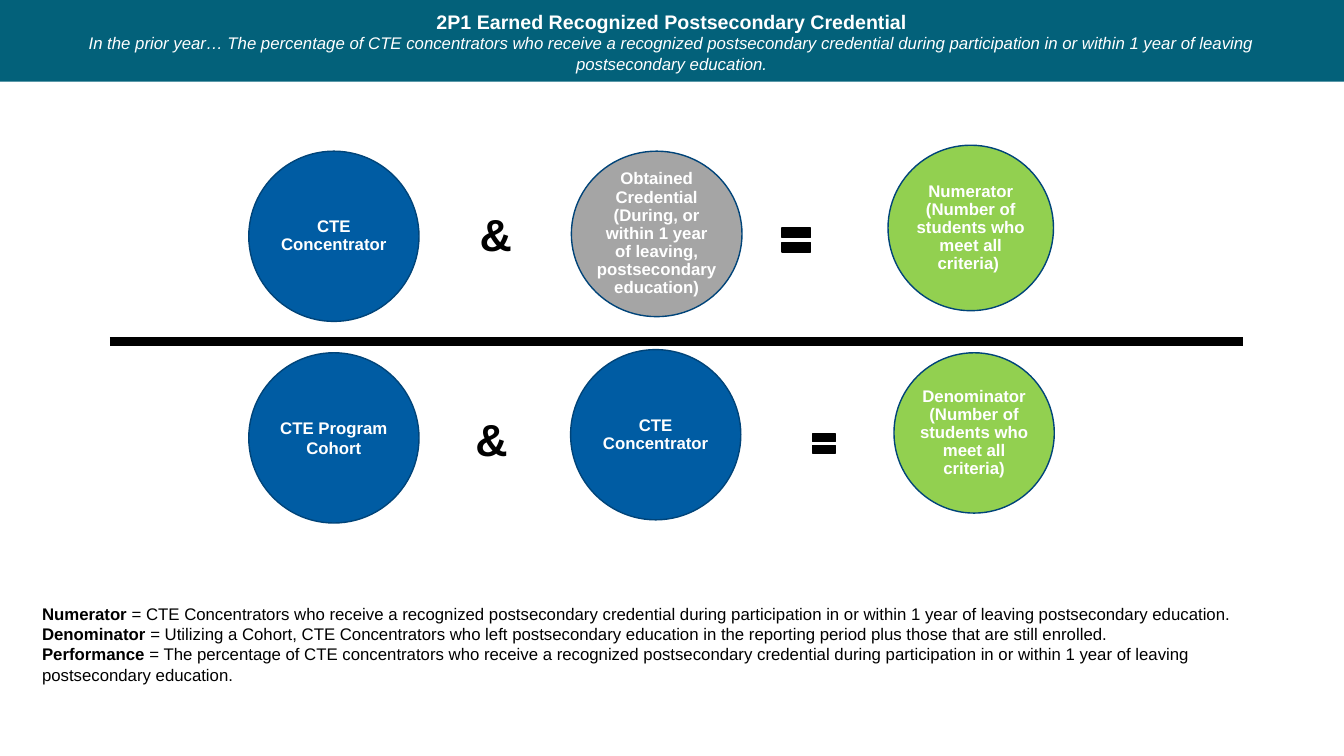
from pptx import Presentation
from pptx.dml.color import RGBColor
from pptx.enum.shapes import MSO_CONNECTOR, MSO_SHAPE
from pptx.enum.text import MSO_ANCHOR, PP_ALIGN
from pptx.oxml.ns import qn
from pptx.util import Cm, Pt
from lxml import etree

COLORS = {
    "banner": "03617A",
    "blue": "005CA3",
    "outline": "004479",
    "gray": "A5A5A5",
    "green": "92D050",
    "black": "000000",
    "white": "FFFFFF",
}


def add_filled_shape(preset, left, top, width, height, fill, outline=None):
    shape = slide.shapes.add_shape(preset, Cm(left), Cm(top), Cm(width), Cm(height))
    shape.shadow.inherit = False
    shape.fill.solid()
    shape.fill.fore_color.rgb = RGBColor.from_string(COLORS[fill])
    if outline:
        shape.line.color.rgb = RGBColor.from_string(COLORS[outline])
        shape.line.width = Pt(1)
    else:
        shape.line.fill.background()
    return shape


def format_run(run, size, color, bold=False, italic=False):
    run.font.name = "Arial"
    run.font.size = Pt(size)
    run.font.bold = bold
    run.font.italic = italic
    run.font.color.rgb = RGBColor.from_string(COLORS[color])


presentation = Presentation()
presentation.slide_width = Cm(33.87)
presentation.slide_height = Cm(19.05)
slide = presentation.slides.add_slide(presentation.slide_layouts[6])

# Banner with title and subtitle
add_filled_shape(MSO_SHAPE.RECTANGLE, 0, 0, 33.87, 2.06, "banner")
title_box = slide.shapes.add_textbox(Cm(1.37), Cm(0.36), Cm(31.12), Cm(1.37))
title_frame = title_box.text_frame
title_frame.word_wrap = True
title_frame.vertical_anchor = MSO_ANCHOR.MIDDLE
title_frame.text = (
    "2P1 Earned Recognized Postsecondary Credential\n"
    "In the prior year… The percentage of CTE concentrators who receive a recognized "
    "postsecondary credential during participation in or within 1 year of leaving "
    "postsecondary education."
)
title, subtitle = title_frame.paragraphs
title.alignment = subtitle.alignment = PP_ALIGN.CENTER
format_run(title.runs[0], 14, "white", bold=True)
format_run(subtitle.runs[0], 12, "white", italic=True)

# Circles: left, top, width, height, fill, line spacing, text
circles = [
    (14.38, 8.81, 4.29, 4.29, "blue", 0.9, "CTE Concentrator"),
    (6.27, 8.89, 4.29, 4.29, "blue", 1.0, "CTE Program\nCohort"),
    (6.27, 3.81, 4.29, 4.29, "blue", 0.9, "CTE Concentrator"),
    (14.4, 3.81, 4.3, 4.17, "gray", 0.9,
     "Obtained Credential (During, or within 1 year of leaving, postsecondary education)"),
    (22.38, 3.66, 4.17, 4.17, "green", 0.9,
     "Numerator (Number of students who meet all criteria) "),
    (22.53, 8.89, 4.04, 4.04, "green", 0.9,
     "Denominator (Number of students who meet all criteria)"),
]
for left, top, width, height, fill, line_spacing, text in circles:
    circle = add_filled_shape(MSO_SHAPE.OVAL, left, top, width, height, fill, "outline")
    frame = circle.text_frame
    frame.margin_left = frame.margin_top = frame.margin_right = frame.margin_bottom = 0
    frame.word_wrap = True
    frame.vertical_anchor = MSO_ANCHOR.MIDDLE
    frame.text = text
    for paragraph in frame.paragraphs:
        paragraph.alignment = PP_ALIGN.CENTER
        paragraph.line_spacing = line_spacing
        format_run(paragraph.runs[0], 12, "white", bold=True)

# Equal signs
for left, top, width, height in [(19.58, 5.54, 0.97, 1.02), (20.37, 10.77, 0.79, 0.81)]:
    add_filled_shape(MSO_SHAPE.MATH_EQUAL, left, top, width, height, "black", "black")

# Fraction bar
fraction_bar = slide.shapes.add_connector(
    MSO_CONNECTOR.STRAIGHT, Cm(2.77), Cm(8.61), Cm(31.32), Cm(8.61))
fraction_bar.line.color.rgb = RGBColor.from_string(COLORS["black"])
fraction_bar.line.width = Pt(6)
etree.SubElement(fraction_bar._element.spPr, qn("a:effectLst"))

# Definitions
definitions = [
    ("Numerator ",
     "= CTE Concentrators who receive a recognized postsecondary credential during "
     "participation in or within 1 year of leaving postsecondary education."),
    ("Denominator ",
     "= Utilizing a Cohort, CTE Concentrators who left postsecondary education in the "
     "reporting period plus those that are still enrolled."),
    ("Performance ",
     "= The percentage of CTE concentrators who receive a recognized postsecondary credential "
     "during participation in or within 1 year of leaving postsecondary education."),
]
definition_box = slide.shapes.add_textbox(Cm(0.81), Cm(15.09), Cm(32.23), Cm(2.31))
definition_frame = definition_box.text_frame
definition_frame.word_wrap = True
definition_frame.text = "\n".join(term for term, meaning in definitions)
for paragraph, (term, meaning) in zip(definition_frame.paragraphs, definitions):
    format_run(paragraph.runs[0], 12, "black", bold=True)
    meaning_run = paragraph.add_run()
    meaning_run.text = meaning
    format_run(meaning_run, 12, "black")

# Ampersands
for left, top in [(11.84, 5.08), (11.73, 10.24)]:
    ampersand_box = slide.shapes.add_textbox(Cm(left), Cm(top), Cm(1.07), Cm(1.63))
    ampersand_box.text_frame.word_wrap = True
    ampersand_box.text_frame.text = "&"
    format_run(ampersand_box.text_frame.paragraphs[0].runs[0], 32, "black", bold=True)

presentation.save("out.pptx")
